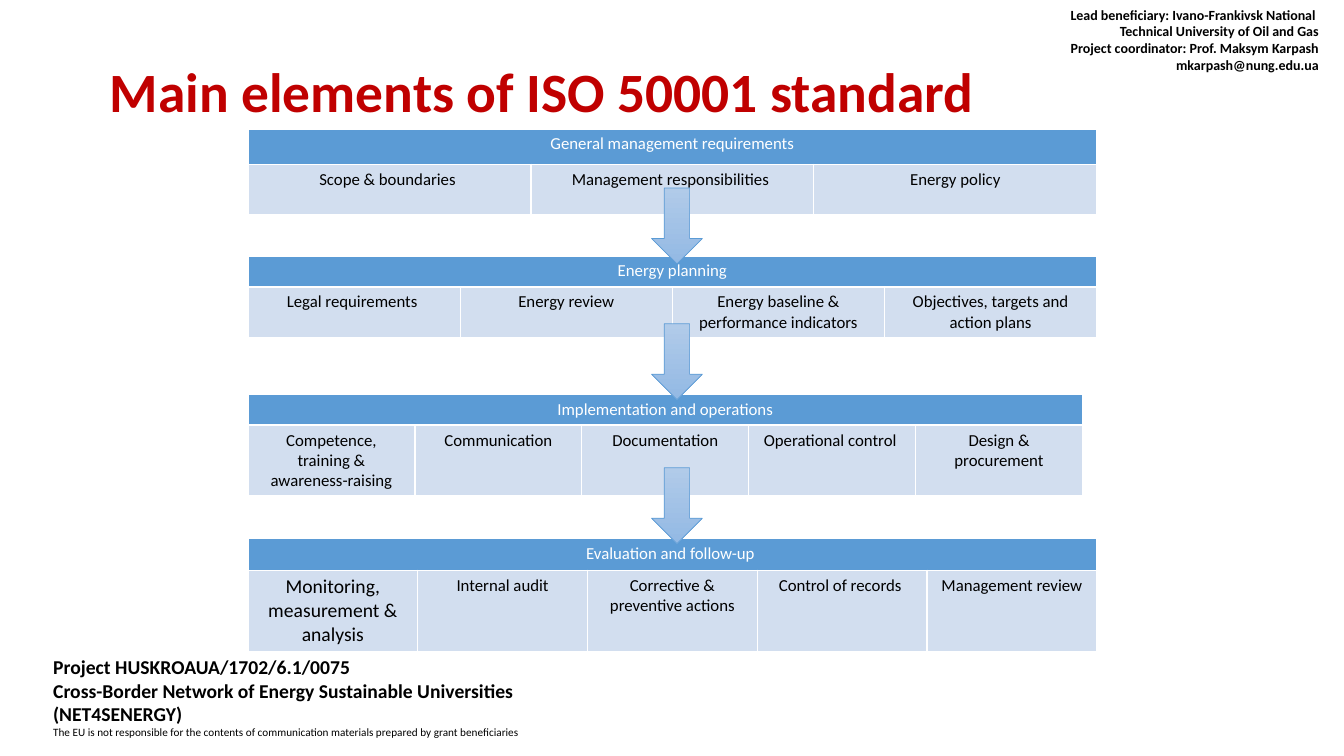
from pptx import Presentation
from pptx.dml.color import RGBColor as RGB
from pptx.enum.shapes import MSO_SHAPE as Shape
from pptx.enum.text import MSO_ANCHOR as Anchor, PP_ALIGN as Align
from pptx.util import Cm, Pt

COLORS = {
    "black": "000000", "white": "FFFFFF", "red": "C00000",
    "head": "5B9BD5", "cell": "D2DEEF", "top": "B1CBE9", "base": "93B9E4",
}


def add_run(para, text, size, color, bold=False):
    run = para.add_run()
    run.text = text
    font = run.font
    font.name, font.size, font.bold = "Calibri", Pt(size), bold
    font.color.rgb = RGB.from_string(COLORS[color])


def add_box(left, top, width, height, lines, color="black", align=Align.LEFT):
    frame = slide.shapes.add_textbox(
        Cm(left), Cm(top), Cm(width), Cm(height)).text_frame
    frame.word_wrap = True
    for i, (text, size, bold) in enumerate(lines):
        para = frame.add_paragraph() if i else frame.paragraphs[0]
        para.alignment = align
        add_run(para, text, size, color, bold)
    return frame


deck = Presentation()
deck.slide_width, deck.slide_height = Cm(33.87), Cm(19.05)
slide = deck.slides.add_slide(deck.slide_layouts[6])

# Project footer and contact header
add_box(1.09, 16.38, 18.75, 2.39, [
    ("Project HUSKROAUA/1702/6.1/0075", 14, True),
    ("Cross-Border Network of Energy Sustainable Universities", 14, True),
    ("(NET4SENERGY)", 14, True),
    ("The EU is not responsible for the contents of communication materials "
     "prepared by grant beneficiaries", 8, False),
])
add_box(23.5, 0.03, 9.98, 1.96, [
    ("Lead beneficiary: Ivano-Frankivsk National ", 10, True),
    ("Technical University of Oil and Gas", 10, True),
    ("Project coordinator: Prof. Maksym Karpash", 10, True),
    ("mkarpash@nung.edu.ua", 10, True),
], align=Align.RIGHT)

# Title
title = add_box(2.52, 1.68, 29.21, 1.42,
                [("Main elements of ISO 50001 standard", 39.6, True)], "red")
title.vertical_anchor = Anchor.MIDDLE
title.paragraphs[0].line_spacing = 0.9

# Stages: top, width, row heights, heading, elements
stages = [
    (3.25, 21.39, (0.89, 1.27), "General management requirements",
     ["Scope & boundaries ", "Management responsibilities ", "Energy policy"]),
    (6.45, 21.39, (0.78, 1.28), "Energy planning",
     ["Legal requirements ", "Energy review",
      "Energy baseline & performance indicators",
      "Objectives, targets and action plans"]),
    (9.93, 21.03, (0.78, 1.77), "Implementation and operations",
     ["Competence, training & awareness-raising", "Communication",
      "Documentation", "Operational control ", "Design & procurement"]),
    (13.56, 21.39, (0.81, 2.04), "Evaluation and follow-up ",
     ["Monitoring, measurement & analysis", "Internal audit",
      "Corrective & preventive actions", "Control of records ",
      "Management review"]),
]
for top, width, heights, head, items in stages:
    count = len(items)
    table = slide.shapes.add_table(
        2, count, Cm(6.25), Cm(top), Cm(width), Cm(sum(heights))).table
    for row, height in zip(table.rows, heights):
        row.height = Cm(height)
    for col in table.columns:
        col.width = Cm(width / count)
    table.cell(0, 0).merge(table.cell(0, count - 1))
    for r, texts in enumerate([[head], items]):
        for c, text in enumerate(texts):
            cell = table.cell(r, c)
            cell.fill.solid()
            cell.fill.fore_color.rgb = RGB.from_string(
                COLORS["cell" if r else "head"])
            para = cell.text_frame.paragraphs[0]
            para.alignment = Align.CENTER
            size = 14 if text.startswith("Monitoring") else 12
            add_run(para, text, size, "black" if r else "white")

# Arrows between the stages
for top in (4.74, 8.16, 11.79):
    arrow = slide.shapes.add_shape(
        Shape.DOWN_ARROW, Cm(16.42), Cm(top), Cm(1.28), Cm(1.91))
    arrow.shadow.inherit = False
    arrow.fill.gradient()
    arrow.fill.gradient_angle = 270
    for stop, name in zip(arrow.fill.gradient_stops, ("top", "base")):
        stop.color.rgb = RGB.from_string(COLORS[name])
    arrow.line.color.rgb = RGB.from_string(COLORS["head"])
    arrow.line.width = Pt(0.5)

deck.save("out.pptx")
